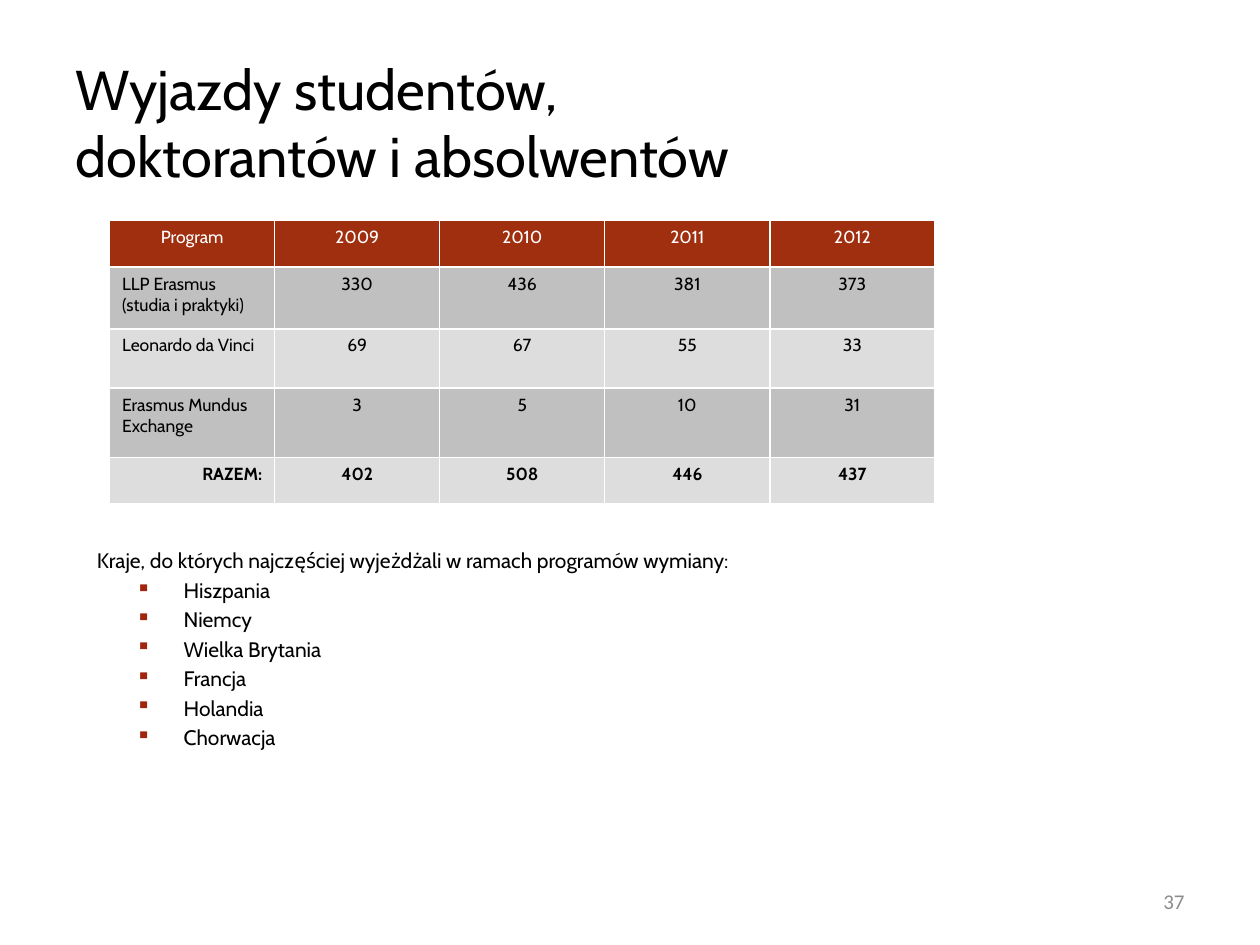
import pptx
import pptx.util
import pptx.dml.color
import pptx.enum.text
import pptx.oxml
import pptx.oxml.ns
from pptx.util import Inches

COLORS = {
    "text": "000000",
    "white": "FFFFFF",
    "header": "A02F10",
    "dark_row": "C0C0C0",
    "light_row": "DDDDDD",
    "bullet": "9F250D",
    "page_number": "8C8C8C",
}
ALIGN = pptx.enum.text.PP_ALIGN
MIDDLE = pptx.enum.text.MSO_ANCHOR.MIDDLE

TRIPS = [
    ["Program", "2009", "2010", "2011", "2012"],
    ["LLP Erasmus \v(studia i praktyki)", "330", "436", "381", "373"],
    ["Leonardo da Vinci", "69", "67", "55", "33"],
    ["Erasmus Mundus Exchange", "3", "5", "10", "31"],
    ["RAZEM:", "402", "508", "446", "437"],
]
ROW_HEIGHTS = [0.37, 0.49, 0.47, 0.55, 0.37]
COLUMN_WIDTH = 1.31
COUNTRIES_INTRO = "Kraje, do których najczęściej wyjeżdżali w ramach programów wymiany:"
COUNTRIES = ["Hiszpania", "Niemcy", "Wielka Brytania", "Francja", "Holandia", "Chorwacja"]


def rgb(name):
    return pptx.dml.color.RGBColor.from_string(COLORS[name])


def style(paragraph, size, color="text", align=ALIGN.LEFT, bold=False, font="Cabin"):
    paragraph.alignment = align
    for run in paragraph.runs:
        run.font.name = font
        run.font.size = pptx.util.Pt(size)
        run.font.bold = bold
        run.font.color.rgb = rgb(color)


def add_element(parent, tag, **attributes):
    element = pptx.oxml.parse_xml(f"<a:{tag} {pptx.oxml.ns.nsdecls('a')}/>")
    for key, value in attributes.items():
        element.set(key, str(value))
    parent.append(element)
    return element


def add_borders(cell):
    properties = cell._tc.get_or_add_tcPr()
    for side in ("lnL", "lnR", "lnT", "lnB"):
        line = add_element(properties, side, w=pptx.util.Pt(1))
        fill = add_element(line, "solidFill")
        add_element(fill, "srgbClr", val=COLORS["white"])


def add_bullet(paragraph):
    properties = paragraph._p.get_or_add_pPr()
    properties.set("marL", str(Inches(0.69)))
    properties.set("indent", str(Inches(-0.38)))
    color = add_element(properties, "buClr")
    add_element(color, "srgbClr", val=COLORS["bullet"])
    add_element(properties, "buChar", char="▪")


def add_text_frame(slide, left, top, width, height):
    frame = slide.shapes.add_textbox(
        Inches(left), Inches(top), Inches(width), Inches(height)).text_frame
    frame.word_wrap = True
    return frame


def set_title(slide):
    title = slide.shapes.title
    title.left, title.top = Inches(0.5), Inches(0.46)
    title.width, title.height = Inches(9), Inches(1.01)
    frame = title.text_frame
    frame.text = "Wyjazdy studentów, \vdoktorantów i absolwentów"
    frame.auto_size = pptx.enum.text.MSO_AUTO_SIZE.NONE
    frame.vertical_anchor = MIDDLE
    style(frame.paragraphs[0], 32)


def add_trips_table(slide):
    table = slide.shapes.add_table(
        len(TRIPS), len(TRIPS[0]), Inches(0.87), Inches(1.75),
        Inches(COLUMN_WIDTH * len(TRIPS[0])), Inches(sum(ROW_HEIGHTS))).table
    for column in table.columns:
        column.width = Inches(COLUMN_WIDTH)
    last = len(TRIPS) - 1
    for row, values in enumerate(TRIPS):
        table.rows[row].height = Inches(ROW_HEIGHTS[row])
        is_header = row == 0
        fill = "header" if is_header else ("dark_row" if row % 2 else "light_row")
        for column, value in enumerate(values):
            cell = table.cell(row, column)
            cell.text = value
            add_borders(cell)
            cell.fill.solid()
            cell.fill.fore_color.rgb = rgb(fill)
            align = ALIGN.CENTER
            if column == 0 and not is_header:
                align = ALIGN.RIGHT if row == last else ALIGN.LEFT
            style(cell.text_frame.paragraphs[0], 10,
                  "white" if is_header else "text", align, bold=row == last)


def add_countries(slide):
    frame = add_text_frame(slide, 0.67, 4.3, 8.83, 2.48)
    frame.text = COUNTRIES_INTRO
    style(frame.paragraphs[0], 12)
    for country in COUNTRIES:
        paragraph = frame.add_paragraph()
        paragraph.text = country
        paragraph.space_before = pptx.util.Pt(2.4)
        add_bullet(paragraph)
        style(paragraph, 12)


def add_page_number(slide):
    frame = add_text_frame(slide, 7.17, 6.95, 2.33, 0.4)
    frame.vertical_anchor = MIDDLE
    frame.text = "37"
    style(frame.paragraphs[0], 12, "page_number", ALIGN.RIGHT, font="Calibri")


def main():
    presentation = pptx.Presentation()
    presentation.slide_width, presentation.slide_height = Inches(10), Inches(7.5)
    slide = presentation.slides.add_slide(presentation.slide_layouts[5])
    set_title(slide)
    add_trips_table(slide)
    add_countries(slide)
    add_page_number(slide)
    presentation.save("out.pptx")


if __name__ == "__main__":
    main()
